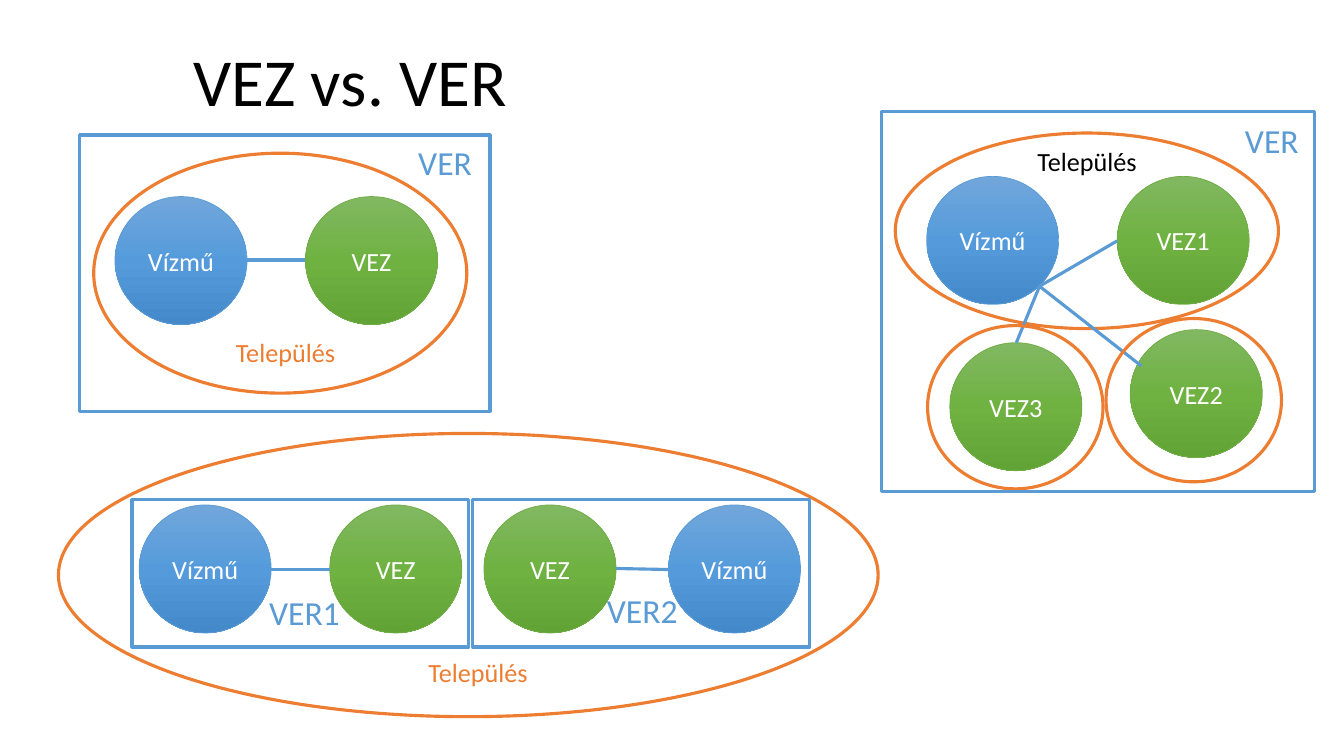
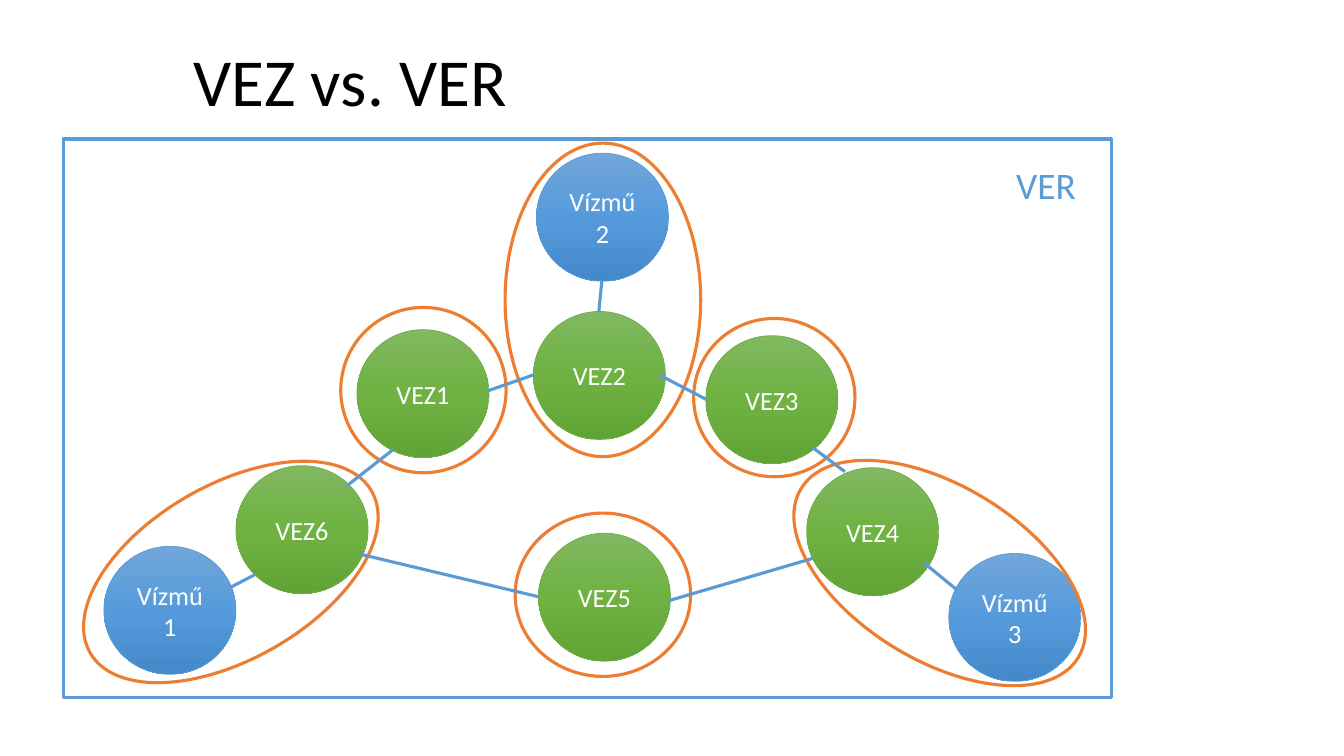
from copy import deepcopy
from pptx import Presentation
from pptx.dml.color import RGBColor
from pptx.enum.shapes import MSO_CONNECTOR, MSO_SHAPE
from pptx.enum.text import MSO_ANCHOR, PP_ALIGN
from pptx.oxml.ns import qn
from pptx.oxml.xmlchemy import OxmlElement
from pptx.util import Inches, Pt

HEX = {
    "black": "000000", "white": "FFFFFF", "blue": "5B9BD5",
    "orange": "ED7D31", "green": "70AD47",
}
# Disc styles: outline colour, then gradient stops at 0, 50 and 100 percent
DISC = {
    "water": ("blue", ["71A6DB", "559BDB", "448ACA"]),
    "plant": ("green", ["81B861", "6FB242", "62A336"]),
}
EDGE = {"ring": (MSO_SHAPE.OVAL, "orange"), "frame": (MSO_SHAPE.RECTANGLE, "blue")}
CELL = Inches(0.1)  # the grid has ten columns and ten rows to the inch
WIDE, HIGH = 13.1, 12.7  # size of a disc
THICK, THIN = 2.25, 0.5
TITLE = "VEZ vs. VER"


def grid(*cells):
    """Turn grid cells into slide lengths."""
    return [round(cell * CELL) for cell in cells]


def write(shape, words, size=18.7, color="white", align=PP_ALIGN.LEFT,
          anchor=MSO_ANCHOR.TOP, wrap=True, space=None):
    frame = shape.text_frame
    frame.word_wrap = wrap
    frame.vertical_anchor = anchor
    frame.text = words
    for para in frame.paragraphs:
        para.alignment = align
        para.line_spacing = space
        font = para.runs[0].font
        font.name, font.size = "Calibri", Pt(size)
        font.color.rgb = RGBColor.from_string(HEX[color])


# Items run from back to front, in grid cells:
# disc: left, top, words; link: x1, y1, x2, y2
# ring, frame: left, top, width, height, turn; label: box, words, size, colour
ONE = [
    ("water", 11.4, 19.5, "Vízmű"),
    ("plant", 30.3, 19.5, "VEZ"),
    ("link", 24.5, 25.8, 30.3, 25.8),
    ("ring", 9.3, 15.2, 37, 23.8, 0),
    ("label", 22.4, 32.9, 11.9, 4.2, "Település", 18.7, "orange"),

    ("water", 91.9, 17.5, "Vízmű"),
    ("plant", 110.8, 17.5, "VEZ1"),
    ("link", 103.1, 28.4, 110.8, 23.9),
    ("ring", 88.8, 13.2, 38, 19.4, 0),
    ("label", 101.9, 13.9, 11.9, 4.2, "Település", 18.7, "black"),
    ("plant", 112.1, 32.7, "VEZ2"),
    ("link", 103.1, 28.4, 113.2, 36.3),
    ("plant", 94.2, 34, "VEZ3"),
    ("link", 103.1, 28.4, 100.8, 34),
    ("ring", 109.7, 31.6, 17.4, 16.2, 0),
    ("ring", 92, 32.3, 17.4, 16.2, 0),
    ("frame", 87.4, 11.1, 43, 37.7, 0),
    ("label", 122.5, 11.4, 7.4, 5, "VER", 24, "blue"),
    ("frame", 7.9, 13.4, 40.7, 27.4, 0),
    ("label", 40.5, 13.6, 7.4, 5, "VER", 24, "blue"),

    ("water", 13.8, 50.1, "Vízmű"),
    ("plant", 32.7, 50.1, "VEZ"),
    ("link", 26.9, 56.5, 32.7, 56.5),
    ("ring", 5.8, 43, 81.3, 28.1, 0),
    ("label", 41.5, 64.6, 11.9, 4.2, "Település", 18.7, "orange"),
    ("frame", 13.1, 49.6, 33.4, 14.6, 0),
    ("label", 25.7, 58.2, 9.1, 5, "VER1", 24, "blue"),
    ("water", 66.3, 50.1, "Vízmű"),
    ("plant", 48, 50.1, "VEZ"),
    ("link", 66.3, 56.5, 61.1, 56.4),
    ("frame", 46.9, 49.6, 33.4, 14.6, 0),
    ("label", 59.2, 58, 9.1, 5, "VER2", 24, "blue"),
]
TWO = [
    ("plant", 35.4, 32.7, "VEZ1"),
    ("ring", 33.8, 30.5, 16.4, 16.4, 0),
    ("water", 53.2, 15.2, "Vízmű 2"),
    ("plant", 70, 33.3, "VEZ3"),
    ("ring", 68.8, 31.6, 16, 15.7, 0),
    ("plant", 80, 46.4, "VEZ4"),
    ("plant", 52.9, 30.9, "VEZ2"),
    ("link", 59.7, 27.8, 59.4, 30.9),
    ("ring", 50.1, 14.2, 19.4, 31.1, 0),
    ("ring", 51.1, 50.9, 17.4, 16.2, 0),
    ("frame", 6.3, 13.8, 103.9, 55.4, 0),
    ("label", 99.8, 15.6, 8, 5.5, "VER", 26.7, "blue"),
    ("water", 10.3, 54.2, "Vízmű1"),
    ("plant", 23.4, 46.2, "VEZ6"),
    ("link", 22.8, 58.3, 25.3, 57),
    ("ring", 6.8, 48.1, 32.2, 17.3, 330.1),
    ("water", 94.1, 54.9, "Vízmű\n3"),
    ("plant", 53.4, 52.9, "VEZ5"),
    ("link", 95, 58.6, 91.6, 55.8),
    ("ring", 77.1, 48.2, 32.2, 17.3, 31.4),
    ("link", 53.4, 59.2, 35.8, 55),
    ("link", 80.6, 55.4, 66.3, 59.6),
    ("link", 39, 44.6, 34.4, 48.2),
    ("link", 52.9, 37.2, 48.3, 38.8),
    ("link", 70, 39.6, 65.4, 37.2),
    ("link", 80.6, 44.4, 83.8, 46.8),
]

deck = Presentation()
deck.slide_width, deck.slide_height = Inches(13.33), Inches(7.5)

for items in (ONE, TWO):
    slide = deck.slides.add_slide(deck.slide_layouts[6])
    shapes = slide.shapes
    title = shapes.add_textbox(*grid(18.2, 4, 105.9, 8.8))
    write(title, TITLE, size=48, color="black", anchor=MSO_ANCHOR.MIDDLE, space=0.9)

    for kind, *data in items:
        if kind == "label":
            *box, words, size, color = data
            write(shapes.add_textbox(*grid(*box)), words, size=size,
                  color=color, wrap=False)
            continue

        if kind == "link":
            item = shapes.add_connector(MSO_CONNECTOR.STRAIGHT, *grid(*data))
            item._element.spPr.append(OxmlElement("a:effectLst"))
            edge, weight = "blue", THICK
        elif kind in EDGE:
            *box, turn = data
            form, edge = EDGE[kind]
            item = shapes.add_shape(form, *grid(*box))
            item.rotation = turn
            item.fill.background()
            item.shadow.inherit = False
            weight = THICK
        else:
            left, top, words = data
            edge, tones = DISC[kind]
            item = shapes.add_shape(MSO_SHAPE.OVAL, *grid(left, top, WIDE, HIGH))
            item.shadow.inherit = False
            item.fill.gradient()
            item.fill.gradient_angle = 270
            stops = item._element.spPr.find(".//" + qn("a:gsLst"))
            stops.append(deepcopy(stops[-1]))
            for stop, place, tone in zip(item.fill.gradient_stops, (0, 0.5, 1), tones):
                stop.position = place
                stop.color.rgb = RGBColor.from_string(tone)
            write(item, words, align=PP_ALIGN.CENTER, anchor=MSO_ANCHOR.MIDDLE)
            weight = THIN
        item.line.color.rgb = RGBColor.from_string(HEX[edge])
        item.line.width = Pt(weight)

deck.save("out.pptx")
